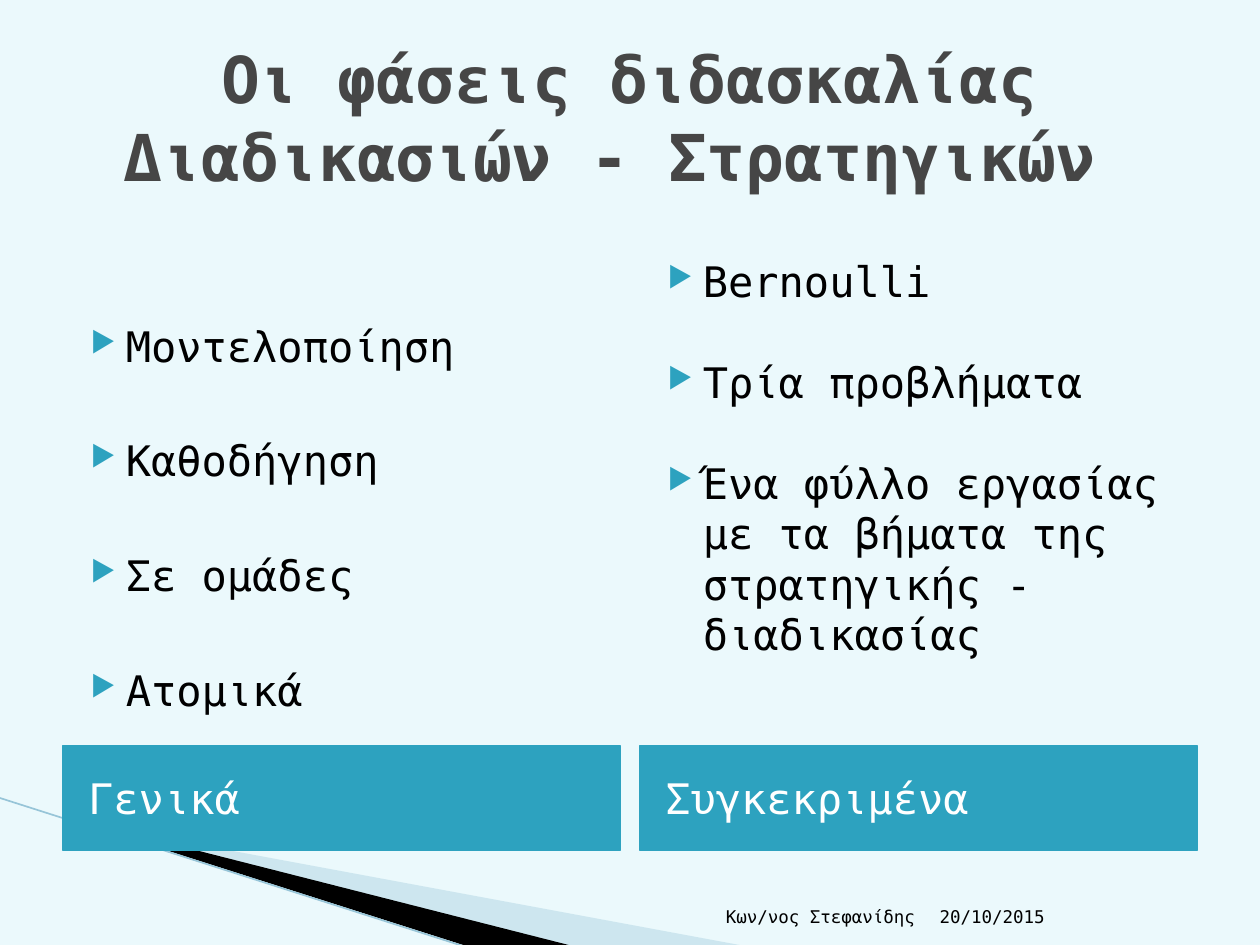
from lxml import etree
from pptx import Presentation
from pptx import util as u
from pptx.dml.color import RGBColor
from pptx.enum import shapes, text
from pptx.oxml import ns

Pt = u.Pt
FONT = "DejaVu Sans Mono"
BACKGROUND = RGBColor(0xEB, 0xF9, 0xFC)
TEAL = RGBColor(0x2D, 0xA2, 0xBF)
PALE_BLUE = RGBColor(0xA0, 0xCB, 0xDC)
LINE_BLUE = RGBColor(0x97, 0xC5, 0xD8)
TITLE_GRAY = RGBColor(0x46, 0x46, 0x46)
BLACK = RGBColor(0, 0, 0)
WHITE = RGBColor(255, 255, 255)

MARGIN = 36
COLUMN_WIDTH = 318.24
BODY_SIZE = 24
LINE_FACTOR = 1.2
BODY_LINE = BODY_SIZE * LINE_FACTOR
COLUMNS = [
    ("Γενικά", ["Μοντελοποίηση", "Καθοδήγηση", "Σε ομάδες", "Ατομικά"], 2, 4),
    ("Συγκεκριμένα",
     ["Bernoulli", "Τρία προβλήματα",
      "Ένα φύλλο εργασίας με τα βήματα της στρατηγικής - διαδικασίας"], 1, 0),
]


def add_xml(parent, tag, **attributes):
    return etree.SubElement(parent, ns.qn(tag), **attributes)


def style(paragraph, size, color, bold=False):
    paragraph.font.name = FONT
    paragraph.font.size = Pt(size)
    paragraph.font.color.rgb = color
    paragraph.font.bold = bold


def add_text(slide, box, content, size, color, anchor,
             align=text.PP_ALIGN.LEFT, bold=False):
    frame = slide.shapes.add_textbox(*map(Pt, box)).text_frame
    frame.word_wrap = True
    frame.vertical_anchor = anchor
    paragraph = frame.paragraphs[0]
    paragraph.text = content
    paragraph.alignment = align
    style(paragraph, size, color, bold)
    return paragraph


def add_wedge(slide, points, color, opacity=None):
    builder = slide.shapes.build_freeform(*points[0], scale=float(Pt(1)))
    builder.add_line_segments(points[1:], close=True)
    wedge = builder.convert_to_shape()
    wedge.shadow.inherit = False
    wedge.fill.solid()
    wedge.fill.fore_color.rgb = color
    wedge.line.fill.background()
    if opacity is not None:
        fill_color = wedge.fill._xPr.find(".//" + ns.qn("a:srgbClr"))
        add_xml(fill_color, "a:alpha", val=str(opacity * 1000))


def add_thin_line(slide, start, end):
    line = slide.shapes.add_connector(
        shapes.MSO_CONNECTOR.STRAIGHT, *map(Pt, start + end))
    line.line.color.rgb = LINE_BLUE
    line.line.width = Pt(0.95)
    add_xml(line._element.spPr, "a:effectLst")


def add_heading_bar(slide, left, label):
    bar = slide.shapes.add_shape(
        shapes.MSO_SHAPE.RECTANGLE, Pt(left), Pt(426), Pt(COLUMN_WIDTH), Pt(60))
    bar.shadow.inherit = False
    bar.fill.solid()
    bar.fill.fore_color.rgb = TEAL
    bar.line.color.rgb = TEAL
    bar.line.width = Pt(0.75)
    frame = bar.text_frame
    frame.margin_left = Pt(14.4)
    frame.vertical_anchor = text.MSO_ANCHOR.MIDDLE
    paragraph = frame.paragraphs[0]
    paragraph.text = label
    paragraph.alignment = text.PP_ALIGN.LEFT
    style(paragraph, BODY_SIZE, WHITE)


def add_bullets(slide, left, items, lines_above, gap):
    box = slide.shapes.add_textbox(
        Pt(left), Pt(113.76), Pt(COLUMN_WIDTH), Pt(310.32))
    frame = box.text_frame
    frame.word_wrap = True
    frame.margin_top = Pt(3.6 + lines_above * (BODY_LINE + gap))
    for index, item in enumerate(items):
        paragraph = frame.add_paragraph() if index else frame.paragraphs[0]
        paragraph.text = item
        properties = paragraph._p.get_or_add_pPr()
        properties.set("marL", str(Pt(28.8)))
        properties.set("indent", str(Pt(-20.16)))
        paragraph.line_spacing = Pt(BODY_LINE)
        if index:
            paragraph.space_before = Pt(BODY_LINE + 2 * gap)
        bullet_color = add_xml(properties, "a:buClr")
        add_xml(bullet_color, "a:srgbClr", val=str(TEAL))
        add_xml(properties, "a:buSzPct", val="68000")
        add_xml(properties, "a:buChar", char="▶")
        style(paragraph, BODY_SIZE, BLACK)


def main():
    presentation = Presentation()
    presentation.slide_width = Pt(720)
    presentation.slide_height = Pt(540)
    slide = presentation.slides.add_slide(presentation.slide_layouts[6])
    slide.background.fill.solid()
    slide.background.fill.fore_color.rgb = BACKGROUND

    add_wedge(slide, [(39.6, 468.6), (428.4, 540.6), (328.4, 540.6), (39.6, 468)],
              PALE_BLUE, 40)
    add_wedge(slide, [(38.2, 467.4), (329, 540.6), (267.8, 541.2), (38.9, 468)], BLACK)
    add_thin_line(slide, (-0.7, 455.8), (267.1, 541.4))

    title = add_text(slide, (MARGIN, 21.6, 648, 90),
                     "Οι φάσεις διδασκαλίας Διαδικασιών - Στρατηγικών ",
                     36.9, TITLE_GRAY, text.MSO_ANCHOR.MIDDLE,
                     text.PP_ALIGN.CENTER, True)
    title.line_spacing = Pt(36.9 * LINE_FACTOR)

    lefts = [MARGIN, 720 - MARGIN - COLUMN_WIDTH]
    for left, (label, items, lines_above, gap) in zip(lefts, COLUMNS):
        add_heading_bar(slide, left, label)
        add_bullets(slide, left, items, lines_above, gap)

    add_text(slide, (529.9, 504.7, 151.2, 28.8), "20/10/2015",
             10, BLACK, text.MSO_ANCHOR.BOTTOM)
    add_text(slide, (344.9, 504.7, 185, 28.8), "Κων/νος Στεφανίδης",
             10, BLACK, text.MSO_ANCHOR.BOTTOM, text.PP_ALIGN.RIGHT)
    presentation.save("out.pptx")


if __name__ == "__main__":
    main()
